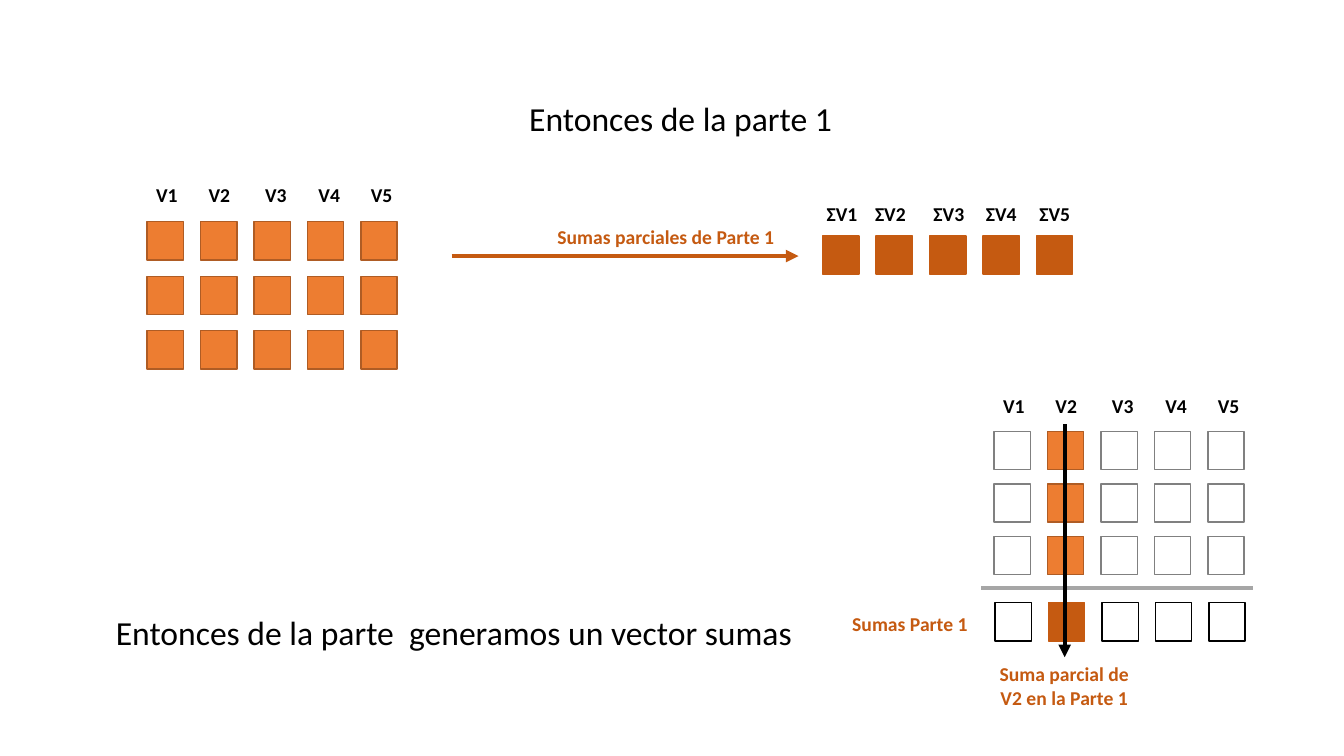
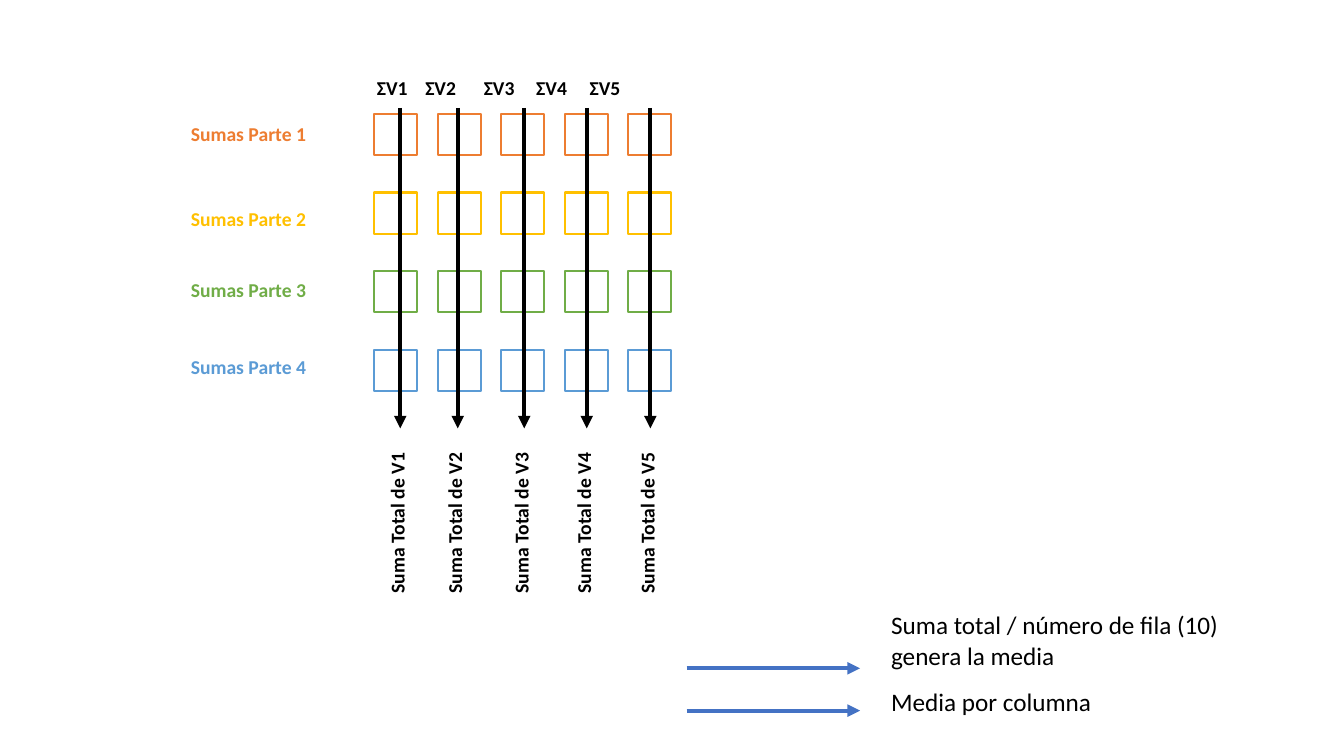
from dataclasses import dataclass

from lxml import etree
from pptx import Presentation
from pptx import util as u
from pptx.dml import color
from pptx.enum import shapes, text
from pptx.oxml import ns
from pptx.slide import Slide

Inches = u.Inches


@dataclass(frozen=True)
class Theme:
    font: str = "Calibri"
    black: str = "000000"
    grey: str = "808080"
    rule: str = "A6A6A6"
    blue: str = "4472C4"
    sky: str = "5B9BD5"
    green: str = "70AD47"
    gold: str = "FFC000"
    orange: str = "ED7D31"
    edge: str = "AF5C24"
    rust: str = "C55A11"
    title: int = 24
    body: int = 18
    label: int = 14
    thin: float = 1
    frame: float = 1.5
    thick: float = 3


T = Theme()
COUNT = 5
HEADS = tuple(f"V{n + 1}" for n in range(COUNT))
SUMS = tuple("Σ" + head for head in HEADS)
HEAD_TABS = (0.52, 1.08, 1.61, 2.13)
SUM_TABS = (0.48, 1.06, 1.58, 2.11)


@dataclass(frozen=True)
class Style:
    line: str
    fill: str | None = None
    weight: float = T.thin


@dataclass(frozen=True)
class Grid:
    left: float
    top: float
    rows: int
    style: Style
    pitch: float = 0.53
    step: float = 0
    width: float = 0.36
    height: float = 0.38
    marked: int | None = None
    accent: Style | None = None


@dataclass(frozen=True)
class Label:
    words: str
    left: float
    top: float
    width: float
    height: float = 0.34
    tint: str = T.black
    size: int = T.label
    bold: bool = True
    align: text.PP_ALIGN = text.PP_ALIGN.CENTER
    turn: float = 0
    tabs: tuple[float, ...] = ()


@dataclass(frozen=True)
class Stroke:
    x1: float
    y1: float
    x2: float
    y2: float
    tint: str = T.black
    arrow: bool = True


BLOCK = Style(T.edge, T.orange)
TOTAL = Style(T.rust, T.rust)


def rgb(code: str) -> color.RGBColor:
    return color.RGBColor.from_string(code)


def add_grid(slide: Slide, grid: Grid) -> None:
    for row in range(grid.rows):
        for col in range(COUNT):
            box = slide.shapes.add_shape(
                shapes.MSO_SHAPE.RECTANGLE,
                Inches(grid.left + col * grid.pitch),
                Inches(grid.top + row * grid.step),
                Inches(grid.width), Inches(grid.height))
            style = grid.accent if grid.accent and col == grid.marked else grid.style
            box.shadow.inherit = False
            if style.fill:
                box.fill.solid()
                box.fill.fore_color.rgb = rgb(style.fill)
            else:
                box.fill.background()
            box.line.color.rgb = rgb(style.line)
            box.line.width = u.Pt(style.weight)


def add_label(slide: Slide, label: Label) -> None:
    box = slide.shapes.add_textbox(
        Inches(label.left), Inches(label.top),
        Inches(label.width), Inches(label.height))
    box.rotation = label.turn
    box.text_frame.word_wrap = True
    para = box.text_frame.paragraphs[0]
    para.alignment = label.align
    if label.tabs:
        stops = etree.SubElement(para._p.get_or_add_pPr(), ns.qn("a:tabLst"))
        for place in label.tabs:
            etree.SubElement(stops, ns.qn("a:tab"), pos=str(Inches(place)), algn="l")
    run = para.add_run()
    run.text = label.words
    run.font.name = T.font
    run.font.size = u.Pt(label.size)
    run.font.bold = label.bold
    run.font.color.rgb = rgb(label.tint)


def add_heads(slide: Slide, names: tuple[str, ...], left: float, top: float,
              width: float, tabs: tuple[float, ...]) -> None:
    """Set the column names in one line, held apart by tab stops."""
    add_label(slide, Label("\t".join(names), left, top, width,
                           align=text.PP_ALIGN.LEFT, tabs=tabs))


def add_note(slide: Slide, words: str, left: float, top: float,
             width: float, height: float, size: int) -> None:
    add_label(slide, Label(words, left, top, width, height, size=size,
                           bold=False, align=text.PP_ALIGN.LEFT))


def add_stroke(slide: Slide, stroke: Stroke) -> None:
    line = slide.shapes.add_connector(
        shapes.MSO_CONNECTOR.STRAIGHT,
        Inches(stroke.x1), Inches(stroke.y1), Inches(stroke.x2), Inches(stroke.y2))
    line.line.color.rgb = rgb(stroke.tint)
    line.line.width = u.Pt(T.thick)
    if stroke.arrow:
        etree.SubElement(line.line._get_or_add_ln(), ns.qn("a:tailEnd"), type="triangle")
    etree.SubElement(line._element.spPr, ns.qn("a:effectLst"))


def draw_part(slide: Slide) -> None:
    """Show how the first part gives its vector of sums."""
    add_note(slide, "Entonces de la parte 1", 5.15, 0.92, 5.64, 0.5, T.title)
    add_note(slide, "Entonces de la parte  generamos un vector sumas",
             1.05, 6.02, 6.95, 0.5, T.title)

    add_heads(slide, HEADS, 1.45, 1.77, 2.59, HEAD_TABS)
    add_grid(slide, Grid(1.46, 2.2, 3, BLOCK, step=0.54))

    add_stroke(slide, Stroke(4.48, 2.54, 7.92, 2.54, T.rust))
    add_label(slide, Label("Sumas parciales de Parte 1", 5.3, 2.18, 2.61, tint=T.rust))
    add_heads(slide, SUMS, 8.1, 1.95, 2.82, SUM_TABS)
    add_grid(slide, Grid(8.16, 2.34, 1, TOTAL))

    add_heads(slide, HEADS, 9.85, 3.86, 2.59, HEAD_TABS)
    add_grid(slide, Grid(9.86, 4.28, 3, Style(T.grey), step=0.52,
                         marked=1, accent=BLOCK))
    add_stroke(slide, Stroke(9.73, 5.83, 12.43, 5.83, T.rule, arrow=False))
    add_grid(slide, Grid(9.87, 5.98, 1, Style(T.black), marked=1, accent=TOTAL))
    add_stroke(slide, Stroke(10.56, 4.21, 10.56, 6.52))
    add_label(slide, Label("Sumas Parte 1", 8.18, 6.02, 1.69, tint=T.rust))
    add_label(slide, Label("Suma parcial de V2 en la Parte 1",
                           9.71, 6.52, 1.69, 0.57, T.rust))


def draw_total(slide: Slide) -> None:
    """Add up the sums of all parts, column by column."""
    add_heads(slide, SUMS, 3.64, 0.7, 3.37, SUM_TABS)
    tints = (T.orange, T.gold, T.green, T.sky)
    tops = (1.16, 2.0, 2.71, 3.47)
    for row, (tint, top) in enumerate(zip(tints, tops)):
        add_label(slide, Label(f"Sumas Parte {row + 1}", 1.45, top, 2.03, 0.37, tint))
        add_grid(slide, Grid(3.71, 1.13 + row * 0.78, 1, Style(tint, weight=T.frame),
                             pitch=0.63, width=0.43, height=0.41))

    wide, high = 1.88, 0.4
    for head, x in zip(HEADS, (3.97, 4.54, 5.2, 5.82, 6.45)):
        add_stroke(slide, Stroke(x, 1.07, x, 4.25))
        add_label(slide, Label(f"Suma Total de {head}", x - wide / 2, 4.99,
                               wide, high, turn=270))

    for y in (6.63, 7.05):
        add_stroke(slide, Stroke(6.81, y, 8.53, y, T.blue))
    add_note(slide, "Suma total / número de fila (10) genera la media",
             8.74, 6, 3.86, 0.71, T.body)
    add_note(slide, "Media por columna", 8.74, 6.76, 3.86, 0.4, T.body)


def main() -> None:
    deck = Presentation()
    deck.slide_width, deck.slide_height = Inches(13.33), Inches(7.5)
    blank = deck.slide_layouts[6]
    for draw in (draw_part, draw_total):
        draw(deck.slides.add_slide(blank))
    deck.save("out.pptx")


if __name__ == "__main__":
    main()
